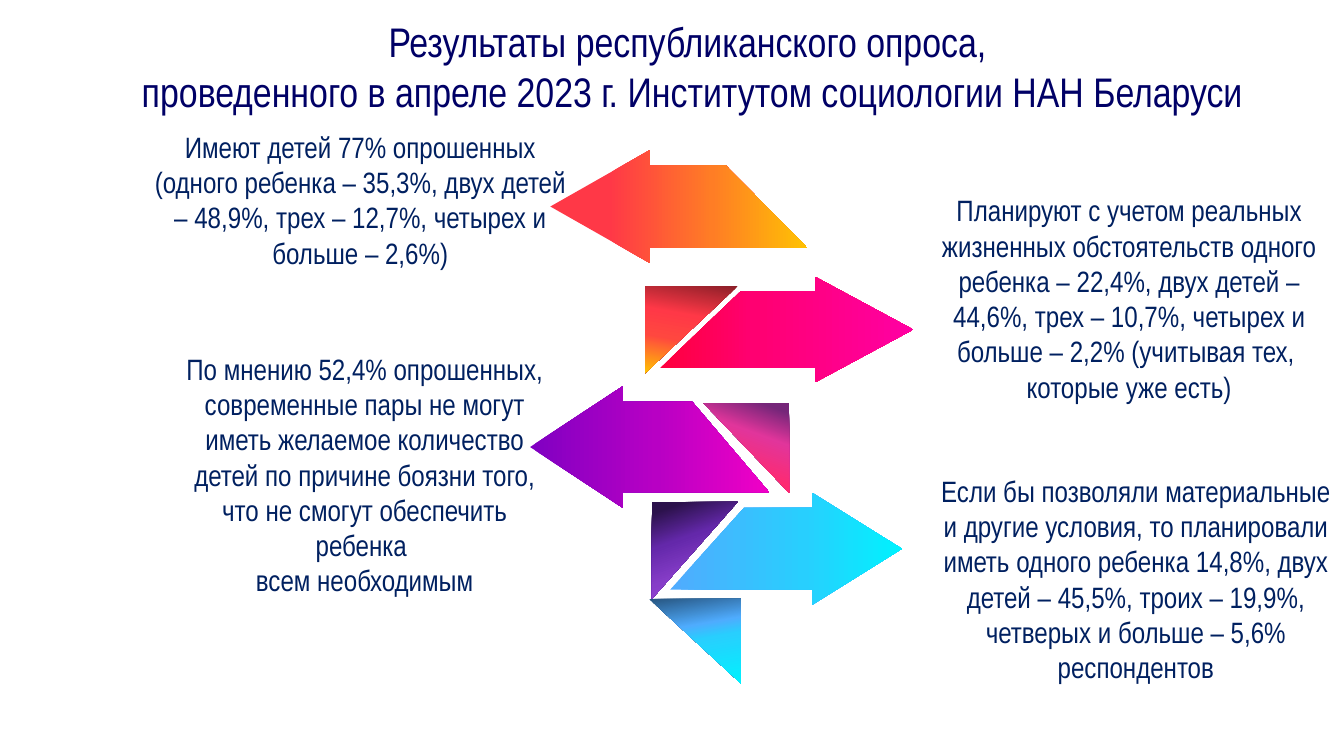
from lxml.etree import SubElement
from pptx import Presentation
from pptx.dml.color import RGBColor
from pptx.enum.text import MSO_ANCHOR, MSO_AUTO_SIZE, PP_ALIGN
from pptx.oxml.ns import qn
from pptx.util import Cm, Pt

FONT = "Arial Narrow"
NAVY = RGBColor(0x00, 0x00, 0x66)
INK = RGBColor(0x00, 0x20, 0x60)
YELLOW = RGBColor(0xFF, 0xC2, 0x03)
ORANGE = RGBColor(0xFF, 0x7D, 0x25)
CORAL = RGBColor(0xFF, 0x47, 0x40)
RED = RGBColor(0xFF, 0x38, 0x47)
MAROON = RGBColor(0x8B, 0x1F, 0x28)
CRIMSON = RGBColor(0xFF, 0x00, 0x40)
ROSE = RGBColor(0xFF, 0x00, 0x71)
PINK = RGBColor(0xFF, 0x00, 0xA2)
PLUM = RGBColor(0x75, 0x26, 0x79)
ORCHID = RGBColor(0xE1, 0x35, 0x9B)
CORAL_PINK = RGBColor(0xFF, 0x2A, 0x70)
VIOLET = RGBColor(0x80, 0x00, 0xC2)
PURPLE = RGBColor(0xB8, 0x00, 0xC4)
MAGENTA = RGBColor(0xF0, 0x00, 0xC6)
MIDNIGHT = RGBColor(0x2C, 0x12, 0x4C)
INDIGO = RGBColor(0x64, 0x28, 0xAA)
AMETHYST = RGBColor(0x86, 0x3D, 0xC8)
LILAC = RGBColor(0xA8, 0x52, 0xE6)
STEEL = RGBColor(0x27, 0x55, 0x80)
SKY = RGBColor(0x4F, 0xAC, 0xFE)
AZURE = RGBColor(0x28, 0xCF, 0xFE)
CYAN = RGBColor(0x00, 0xF2, 0xFE)

# Content: lines are split only where a break is forced
TITLE = ["Результаты республиканского опроса, ",
         "проведенного в апреле 2023 г. Институтом социологии НАН Беларуси"]

# (left, top, width, height), lines
FINDINGS = [
    ((3.76, 3.12, 10.64, 3.84),
     ["Имеют детей 77% опрошенных (одного ребенка – 35,3%, двух детей – 48,9%, "
      "трех – 12,7%, четырех и больше – 2,6%)"]),
    ((23.39, 4.72, 10.13, 6.53),
     ["Планируют с учетом реальных жизненных обстоятельств одного ребенка – 22,4%, "
      "двух детей – 44,6%, трех – 10,7%, четырех и больше – 2,2% (учитывая тех, ",
      "которые уже есть)"]),
    ((4.39, 8.71, 9.6, 7.44),
     ["По мнению 52,4% опрошенных, современные пары не могут иметь желаемое "
      "количество детей по причине боязни того, что не смогут обеспечить ребенка ",
      "всем необходимым"]),
    ((23.52, 11.79, 10.21, 6.53),
     ["Если бы позволяли материальные и другие условия, то планировали иметь одного "
      "ребенка 14,8%, двух детей – 45,5%, троих – 19,9%, четверых и больше – 5,6% "
      "респондентов"]),
]

# (tip x, head x, tail x at top, tail x at bottom),
# (head top, body top, body bottom, head bottom), stops from left to right
ARROWS = [
    ((13.87, 16.38, 18.29, 20.35), (3.78, 4.17, 6.25, 6.63),
     [(23, RED), (63, ORANGE), (100, YELLOW)]),
    ((23.01, 20.55, 18.67, 16.64), (6.98, 7.34, 9.27, 9.63),
     [(2, CRIMSON), (37, ROSE), (99, PINK)]),
    ((13.36, 15.7, 17.45, 19.38), (9.73, 10.13, 12.4, 12.8),
     [(0, VIOLET), (53, PURPLE), (100, MAGENTA)]),
    ((22.73, 20.47, 18.75, 16.89), (12.42, 12.8, 14.86, 15.24),
     [(2, SKY), (58, AZURE), (100, CYAN)]),
]

# (right-angle x, far x, top, bottom), clockwise angle, stops from top down
FOLDS = [
    ((16.26, 18.59, 7.21, 9.4), 100,
     [(0, MAROON), (36, RED), (62, CORAL), (100, YELLOW)]),
    ((19.89, 17.73, 10.16, 12.42), 110,
     [(8, PLUM), (35, ORCHID), (71, CORAL_PINK)]),
    ((16.43, 18.59, 12.65, 15.09), 70,
     [(9, MIDNIGHT), (37, INDIGO), (66, AMETHYST), (100, LILAC)]),
    ((18.67, 16.36, 15.09, 17.22), 80,
     [(0, STEEL), (34, SKY), (49, AZURE), (100, CYAN)]),
]


def write(tf, lines, size, color):
    tf.word_wrap = True
    tf.auto_size = MSO_AUTO_SIZE.NONE
    tf.vertical_anchor = MSO_ANCHOR.TOP
    p = tf.paragraphs[0]
    p.alignment = PP_ALIGN.CENTER
    p.space_before = Pt(0)
    for i, line in enumerate(lines):
        if i:
            p.add_line_break()
        r = p.add_run()
        r.text = line
        r.font.name = FONT
        r.font.size = Pt(size)
        r.font.color.rgb = color


def add_outline(slide, points, stops, angle):
    pts = [(Cm(x), Cm(y)) for x, y in points]
    builder = slide.shapes.build_freeform(*pts[0])
    builder.add_line_segments(pts[1:], close=True)
    s = builder.convert_to_shape()
    s.shadow.inherit = False
    s.line.fill.background()
    s.fill.gradient()
    s.fill.gradient_angle = (360 - angle) % 360
    # Replace the default two stops
    stop_list = s.element.spPr.find(qn("a:gradFill")).find(qn("a:gsLst"))
    for old in list(stop_list):
        stop_list.remove(old)
    for pos, color in stops:
        stop = SubElement(stop_list, qn("a:gs"), pos=str(pos * 1000))
        SubElement(stop, qn("a:srgbClr"), val=str(color))


def main():
    prs = Presentation()
    prs.slide_width, prs.slide_height = Cm(33.87), Cm(19.05)
    slide = prs.slides.add_slide(prs.slide_layouts[5])

    # Title
    s = slide.shapes.title
    s.left, s.top, s.width, s.height = Cm(1.04), Cm(0.28), Cm(32.82), Cm(2.77)
    write(s.text_frame, TITLE, 29.5, NAVY)

    # Folded ribbon: triangles and arrows
    for (corner, far, top, bottom), angle, stops in FOLDS:
        add_outline(slide, [(corner, top), (corner, bottom), (far, top)], stops, angle)
    for (tip, head, tail_top, tail_bottom), ys, stops in ARROWS:
        top, body_top, body_bottom, bottom = ys
        add_outline(slide, [(head, top), (tip, (top + bottom) / 2), (head, bottom),
                            (head, body_bottom), (tail_bottom, body_bottom),
                            (tail_top, body_top), (head, body_top)], stops, 0)

    # Survey findings
    for box, lines in FINDINGS:
        tf = slide.shapes.add_textbox(*map(Cm, box)).text_frame
        tf.margin_left = tf.margin_right = tf.margin_top = tf.margin_bottom = Cm(0.13)
        write(tf, lines, 21, INK)

    prs.save("out.pptx")


if __name__ == "__main__":
    main()
